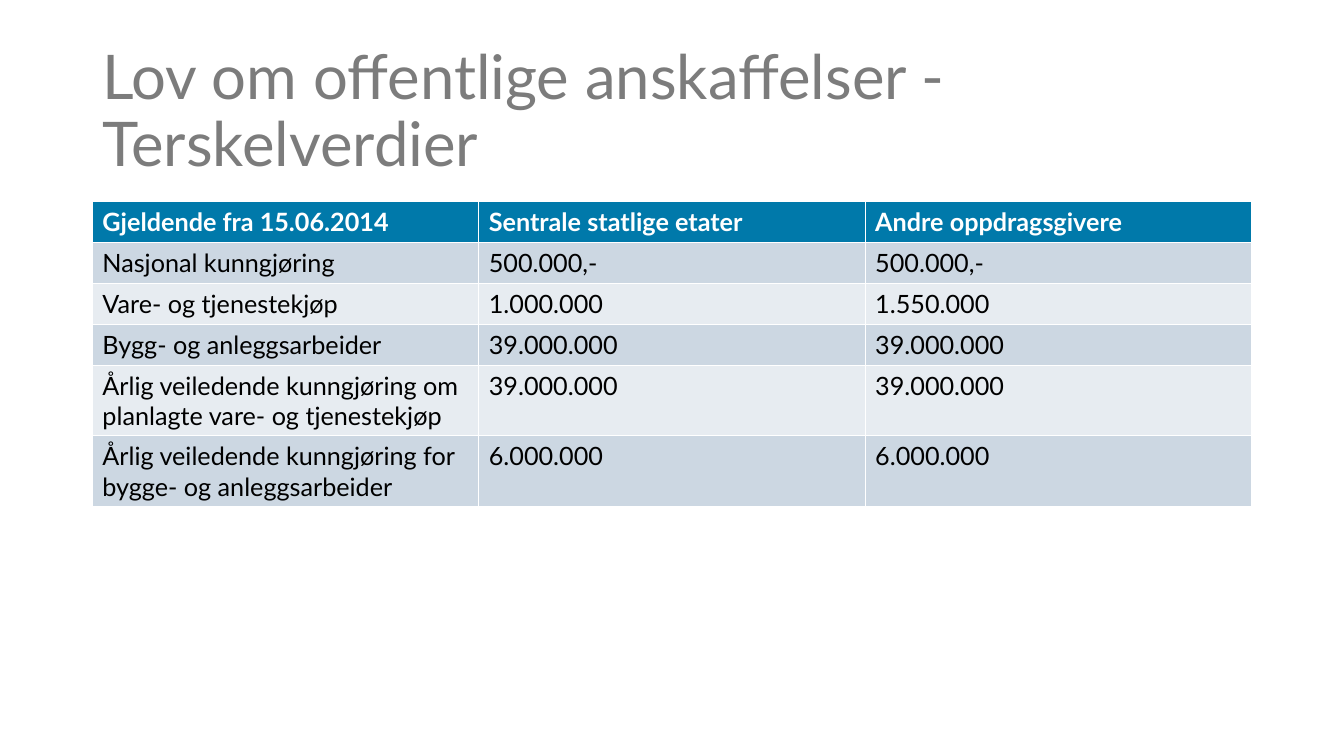
from pptx import Presentation
from pptx.dml.color import RGBColor
from pptx.enum.text import MSO_ANCHOR, MSO_AUTO_SIZE, PP_ALIGN
from pptx.util import Pt

PX = 9525
LEFT = PP_ALIGN.LEFT
MIDDLE = MSO_ANCHOR.MIDDLE
FIXED = MSO_AUTO_SIZE.NONE
FONT = "Lato"
COLORS = {
    "title": "7C7C7C",
    "head": "0079AA",
    "odd": "CCD7E2",
    "even": "E7ECF1",
    "white": "FFFFFF",
    "black": "000000",
}
ROWS = [
    ("Gjeldende fra 15.06.2014", "Sentrale statlige etater", "Andre oppdragsgivere"),
    ("Nasjonal kunngjøring", "500.000,-", "500.000,-"),
    ("Vare- og tjenestekjøp", "1.000.000", "1.550.000"),
    ("Bygg- og anleggsarbeider", "39.000.000", "39.000.000"),
    ("Årlig veiledende kunngjøring om planlagte vare- og tjenestekjøp", "39.000.000", "39.000.000"),
    ("Årlig veiledende kunngjøring for bygge- og anleggsarbeider", "6.000.000", "6.000.000"),
]
SIDE, WIDTH, ROW = 88, 1104, 39


def style(para, size, color, bold=False):
    para.alignment = LEFT
    font = para.font
    font.name = FONT
    font.size = Pt(size)
    font.bold = bold
    font.color.rgb = RGBColor.from_string(COLORS[color])


deck = Presentation()
deck.slide_width = 1280 * PX
deck.slide_height = 720 * PX
slide = deck.slides.add_slide(deck.slide_layouts[5])

title = slide.shapes.title
title.left, title.top = SIDE * PX, 38 * PX
title.width, title.height = WIDTH * PX, 139 * PX
frame = title.text_frame
frame.text = "Lov om offentlige anskaffelser - Terskelverdier"
frame.word_wrap = True
frame.auto_size = FIXED
frame.vertical_anchor = MIDDLE
para = frame.paragraphs[0]
para.line_spacing = 0.9
style(para, 44, "title")

table = slide.shapes.add_table(
    len(ROWS), len(ROWS[0]), SIDE * PX, 192 * PX, WIDTH * PX, len(ROWS) * ROW * PX
).table
for r, row in enumerate(ROWS):
    head = r == 0
    fill = "head" if head else "odd" if r % 2 else "even"
    for c, text in enumerate(row):
        cell = table.cell(r, c)
        cell.text = text
        cell.fill.solid()
        cell.fill.fore_color.rgb = RGBColor.from_string(COLORS[fill])
        style(cell.text_frame.paragraphs[0], 18, "white" if head else "black", head)

deck.save("out.pptx")
